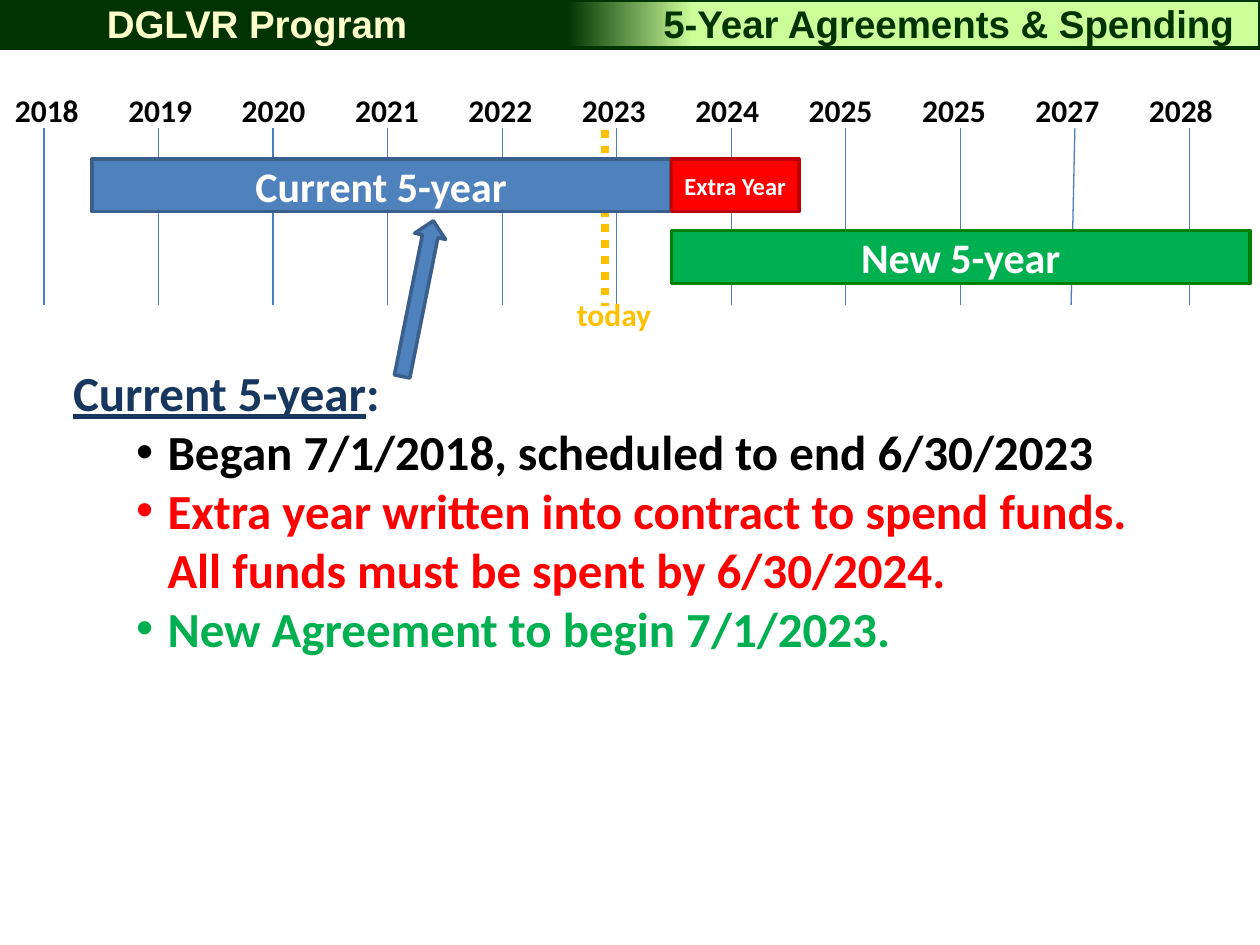
from lxml.etree import SubElement
from pptx import Presentation
from pptx.dml.color import RGBColor
from pptx.enum.dml import MSO_LINE
from pptx.enum.shapes import MSO_CONNECTOR, MSO_SHAPE
from pptx.enum.text import MSO_ANCHOR, MSO_AUTO_SIZE, PP_ALIGN
from pptx.oxml.ns import qn
from pptx.util import Inches, Pt

THEME = {
    "blue": "4F81BD", "blue_edge": "3A5F8C", "grid": "4B7EBC", "navy": "17375E",
    "red": "FF0000", "red_edge": "C00000", "green": "00B050", "green_edge": "008000",
    "today": "FFC000", "forest": "003300", "lime": "CCFF99", "cream": "FFFFCC",
    "black": "000000", "white": "FFFFFF",
    "body_font": "Calibri", "head_font": "Arial",
    "list_size": 28, "bar_size": 24, "head_size": 22, "label_size": 18, "small_size": 14,
}

PROGRAM = "DGLVR Program"
TOPIC = "5-Year Agreements & Spending"
YEARS = ["2018", "2019", "2020", "2021", "2022", "2023",
         "2024", "2025", "2025", "2027", "2028"]
LIST_HEADING = "Current 5-year"
BULLETS = [
    ("Began 7/1/2018, scheduled to end 6/30/2023", "black"),
    ("Extra year written into contract to spend funds. All funds must be spent by 6/30/2024.", "red"),
    ("New Agreement to begin 7/1/2023.", "green"),
]
# text, left, top, width, colour, type size
BARS = [
    ("Current 5-year", 0.73, 1.26, 4.59, "blue", "bar_size"),
    ("Extra Year", 5.33, 1.26, 1.01, "red", "small_size"),
    ("New 5-year", 5.33, 1.83, 4.59, "green", "bar_size"),
]
BAR_HEIGHT = 0.42
GRID_LEFT, GRID_STEP, GRID_TOP, GRID_BOTTOM = 0.35, 0.909, 1.02, 2.42
LABEL_STEP = 0.9
TILTED_LINE, TILT = 9, 0.03
TODAY_X = 4.8


def color(name):
    return RGBColor.from_string(THEME[name])


def place(shape, left, top, width, height):
    shape.left, shape.top = Inches(left), Inches(top)
    shape.width, shape.height = Inches(width), Inches(height)


def set_font(font, size, name, face="body_font"):
    font.size, font.name, font.bold = Pt(THEME[size]), THEME[face], True
    font.color.rgb = color(name)


def write(shape, text, size, name, face="body_font", align=PP_ALIGN.LEFT,
          anchor=MSO_ANCHOR.TOP):
    frame = shape.text_frame
    frame.word_wrap, frame.auto_size = True, MSO_AUTO_SIZE.NONE
    frame.vertical_anchor = anchor
    para = frame.paragraphs[0]
    para.text, para.alignment = text, align
    set_font(para.font, size, name, face)
    return para


def add_text(page, at, *args, **kwargs):
    box = page.shapes.add_textbox(*map(Inches, at))
    return write(box, *args, **kwargs)


def add_line(page, start, end, name, width, dash=None):
    line = page.shapes.add_connector(MSO_CONNECTOR.STRAIGHT,
                                     *map(Inches, (*start, *end)))
    line.line.color.rgb, line.line.width = color(name), Pt(width)
    if dash:
        line.line.dash_style = dash
    SubElement(line._element.spPr, qn("a:effectLst"))


def add_block(page, kind, at, edge, fill=None):
    block = page.shapes.add_shape(kind, *map(Inches, at))
    block.shadow.inherit = False
    block.line.color.rgb, block.line.width = color(edge), Pt(2)
    if fill:
        block.fill.solid()
        block.fill.fore_color.rgb = color(fill)
    return block


def set_indent(para, left, hanging=0.0, bullet=None):
    props = para._p.get_or_add_pPr()
    props.set("marL", str(Inches(left)))
    props.set("indent", str(-Inches(hanging)))
    if bullet:
        SubElement(props, qn("a:buFont"), typeface="Arial")
        SubElement(props, qn("a:buChar"), char=bullet)
    else:
        SubElement(props, qn("a:buNone"))


def fill_list(body):
    place(body, -0.02, 2.83, 9.33, 2.95)
    frame = body.text_frame
    frame.auto_size = MSO_AUTO_SIZE.NONE
    heading = frame.paragraphs[0]
    heading.space_before = Pt(0)
    set_indent(heading, 0.5)
    set_font(heading.font, "list_size", "navy")
    for text, underline in ((LIST_HEADING, True), (":", False)):
        span = heading.add_run()
        span.text = text
        span.font.underline = underline
    for text, name in BULLETS:
        para = frame.add_paragraph()
        para.text, para.level, para.space_before = text, 1, Pt(0)
        set_indent(para, 1.25, 0.25, "•")
        set_font(para.font, "list_size", name)


def add_timeline(page):
    add_line(page, (TODAY_X, 1.03), (TODAY_X, 2.43), "today", 4.5, MSO_LINE.ROUND_DOT)
    labels = add_text(page, (0.02, 0.67, 10, 0.4), "\t".join(YEARS), "label_size", "black")
    tabs = SubElement(labels._p.get_or_add_pPr(), qn("a:tabLst"))
    for index in range(1, len(YEARS)):
        SubElement(tabs, qn("a:tab"), pos=str(Inches(index * LABEL_STEP)), algn="l")
    for index in range(len(YEARS)):
        x = GRID_LEFT + index * GRID_STEP
        foot = x - TILT if index == TILTED_LINE else x
        add_line(page, (x, GRID_TOP), (foot, GRID_BOTTOM), "grid", 0.75)
    for text, left, top, width, name, size in BARS:
        bar = add_block(page, MSO_SHAPE.RECTANGLE, (left, top, width, BAR_HEIGHT),
                        name + "_edge", name)
        write(bar, text, size, "white", align=PP_ALIGN.CENTER, anchor=MSO_ANCHOR.MIDDLE)
    add_text(page, (4.48, 2.29, 0.91, 0.4), "today", "label_size", "today")
    arrow = add_block(page, MSO_SHAPE.DOWN_ARROW, (3.19, 1.74, 0.25, 1.26),
                      "blue_edge", "blue")
    arrow.rotation = 191.3


def add_header(page, title):
    band = add_block(page, MSO_SHAPE.RECTANGLE, (0, 0, 10, 0.38), "forest")
    band.fill.gradient()
    band.fill.gradient_angle = 0
    for stop, position, name in zip(band.fill.gradient_stops, (0.45, 0.55), ("forest", "lime")):
        stop.position, stop.color.rgb = position, color(name)
    add_text(page, (0, -0.05, 4.08, 0.47), PROGRAM, "head_size", "cream",
             "head_font", PP_ALIGN.CENTER)
    place(title, 5.02, -0.05, 5.02, 0.47)
    write(title, TOPIC, "head_size", "forest", "head_font", PP_ALIGN.CENTER)
    band._element.addnext(title._element)  # the title lies over the band


def main():
    deck = Presentation()
    deck.slide_width, deck.slide_height = Inches(10), Inches(7.5)
    page = deck.slides.add_slide(deck.slide_layouts[1])
    fill_list(page.placeholders[1])
    add_timeline(page)
    add_header(page, page.shapes.title)
    deck.save("out.pptx")


if __name__ == "__main__":
    main()
